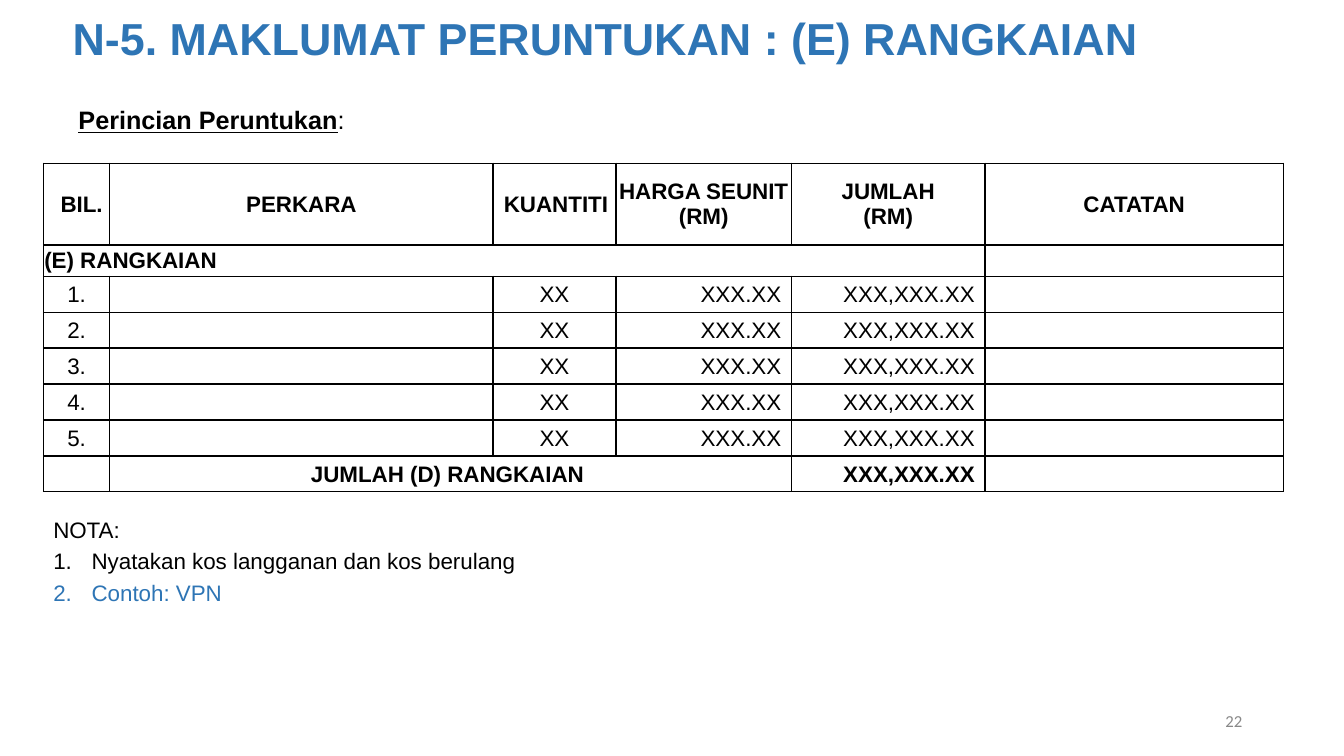
from lxml import etree
from pptx import Presentation, util as u
from pptx.dml.color import RGBColor
from pptx.enum import text
from pptx.oxml import ns

INK = {"black": "000000", "blue": "2E75B5", "grey": "888888"}
WIDE, HIGH = 13.33, 7.5
COLS = [0.66, 3.8, 1.22, 1.74, 1.92, 2.96]
ROWS = [0.81, 0.31] + [0.35] * 6
HEADS = ["BIL.", "PERKARA", "KUANTITI", "HARGA SEUNIT\n(RM)",
         "JUMLAH\n(RM)", "CATATAN"]
TOTAL = "XXX,XXX.XX"
LEFT, MID, RIGHT, JUST = (text.PP_ALIGN.LEFT, text.PP_ALIGN.CENTER,
                          text.PP_ALIGN.RIGHT, text.PP_ALIGN.JUSTIFY)


def child(node, tag, **attrs):
    return etree.SubElement(node, ns.qn(tag), attrs)


def add_run(para, words, size, ink="black", bold=False, line=False, face="Arial"):
    run = para.add_run()
    run.text = words
    font = run.font
    font.name, font.size, font.bold, font.underline = face, u.Pt(size), bold, line
    font.color.rgb = RGBColor.from_string(INK[ink])


def add_box(slide, box, align, anchor=text.MSO_ANCHOR.TOP):
    frame = slide.shapes.add_textbox(*map(u.Inches, box)).text_frame
    frame.word_wrap = True
    frame.vertical_anchor = anchor
    frame.paragraphs[0].alignment = align
    return frame


def add_title(slide, box):
    title = slide.shapes.title
    title.left, title.top, title.width, title.height = map(u.Inches, box)
    frame = title.text_frame
    frame.auto_size = text.MSO_AUTO_SIZE.NONE
    frame.vertical_anchor = text.MSO_ANCHOR.MIDDLE
    para = frame.paragraphs[0]
    para.alignment = LEFT
    add_run(para, "N-5. MAKLUMAT PERUNTUKAN : (E) RANGKAIAN", 32, "blue", True)


def dress(cell):
    """Thin black borders, no fill, tight margins."""
    props = cell._tc.get_or_add_tcPr()
    for side in "LRTB":
        edge = child(props, f"a:ln{side}", w=str(u.Pt(1)))
        child(child(edge, "a:solidFill"), "a:srgbClr", val=INK["black"])
    cell.fill.background()
    cell.vertical_anchor = text.MSO_ANCHOR.MIDDLE
    cell.margin_left = cell.margin_right = cell.margin_top = u.Inches(0.01)
    cell.margin_bottom = 0
    # Empty cells keep the row height of 16 pt text
    child(cell.text_frame.paragraphs[0]._p, "a:endParaRPr", sz="1600")


def write(cell, words, align=MID, bold=False):
    frame = cell.text_frame
    for i, part in enumerate(words.split("\n")):
        para = frame.add_paragraph() if i else frame.paragraphs[0]
        para.alignment = align
        add_run(para, part, 16, bold=bold)
    if align == RIGHT:
        cell.margin_left = cell.margin_right = u.Inches(0.1)
        cell.margin_top, cell.margin_bottom = u.Inches(0.05), u.Inches(0.04)


def add_costs(slide, left, top):
    size = map(u.Inches, (left, top, sum(COLS), sum(ROWS)))
    table = slide.shapes.add_table(len(ROWS), len(COLS), *size).table
    table.first_row = table.horz_banding = False
    for col, width in zip(table.columns, COLS):
        col.width = u.Inches(width)
    for row, height in zip(table.rows, ROWS):
        row.height = u.Inches(height)
    for cell in table.iter_cells():
        dress(cell)
    # Header
    for i, head in enumerate(HEADS):
        write(table.cell(0, i), head, bold=True)
    for i, dent in ((0, 0.1), (2, 0.03)):
        props = table.cell(0, i).text_frame.paragraphs[0]._p.get_or_add_pPr()
        props.set("marL", str(u.Inches(dent)))
    # Group row
    table.cell(1, 0).merge(table.cell(1, 4))
    write(table.cell(1, 0), "(E) RANGKAIAN", LEFT, True)
    # Items
    for n in range(1, 6):
        write(table.cell(n + 1, 0), f"{n}.")
        write(table.cell(n + 1, 2), "XX")
        write(table.cell(n + 1, 3), "XXX.XX", RIGHT)
        write(table.cell(n + 1, 4), TOTAL, RIGHT)
    # Total
    table.cell(7, 1).merge(table.cell(7, 3))
    write(table.cell(7, 1), "JUMLAH (D) RANGKAIAN ", bold=True)
    write(table.cell(7, 4), TOTAL, RIGHT, True)


def add_notes(slide, box):
    frame = add_box(slide, box, JUST)
    add_run(frame.paragraphs[0], "NOTA:", 16)
    for words, ink in (("Nyatakan kos langganan dan kos berulang", "black"),
                       ("Contoh: VPN", "blue")):
        para = frame.add_paragraph()
        para.alignment = JUST
        para.space_before = u.Pt(3.2)
        props = para._p.get_or_add_pPr()
        dent = u.Inches(0.38)
        props.set("marL", str(dent))
        props.set("indent", str(-dent))
        child(child(props, "a:buClr"), "a:srgbClr", val=INK[ink])
        child(props, "a:buFont", typeface="Arial")
        child(props, "a:buAutoNum", type="arabicPeriod")
        add_run(para, words, 16, ink)


def main():
    deck = Presentation()
    deck.slide_width, deck.slide_height = u.Inches(WIDE), u.Inches(HIGH)
    slide = deck.slides.add_slide(deck.slide_layouts[5])
    add_title(slide, (0.62, 0.05, 11.98, 0.65))
    # Subheading
    para = add_box(slide, (0.68, 0.99, 8.35, 0.4), JUST).paragraphs[0]
    add_run(para, "Perincian Peruntukan", 18, bold=True, line=True)
    add_run(para, ": ", 18)
    add_costs(slide, 0.43, 1.62)
    add_notes(slide, (0.43, 5.07, 8.35, 1.02))
    # Page number
    foot = add_box(slide, (9.42, 6.95, 3, 0.4), RIGHT, text.MSO_ANCHOR.MIDDLE)
    add_run(foot.paragraphs[0], "22", 12, "grey", face="Calibri")
    deck.save("out.pptx")


if __name__ == "__main__":
    main()
